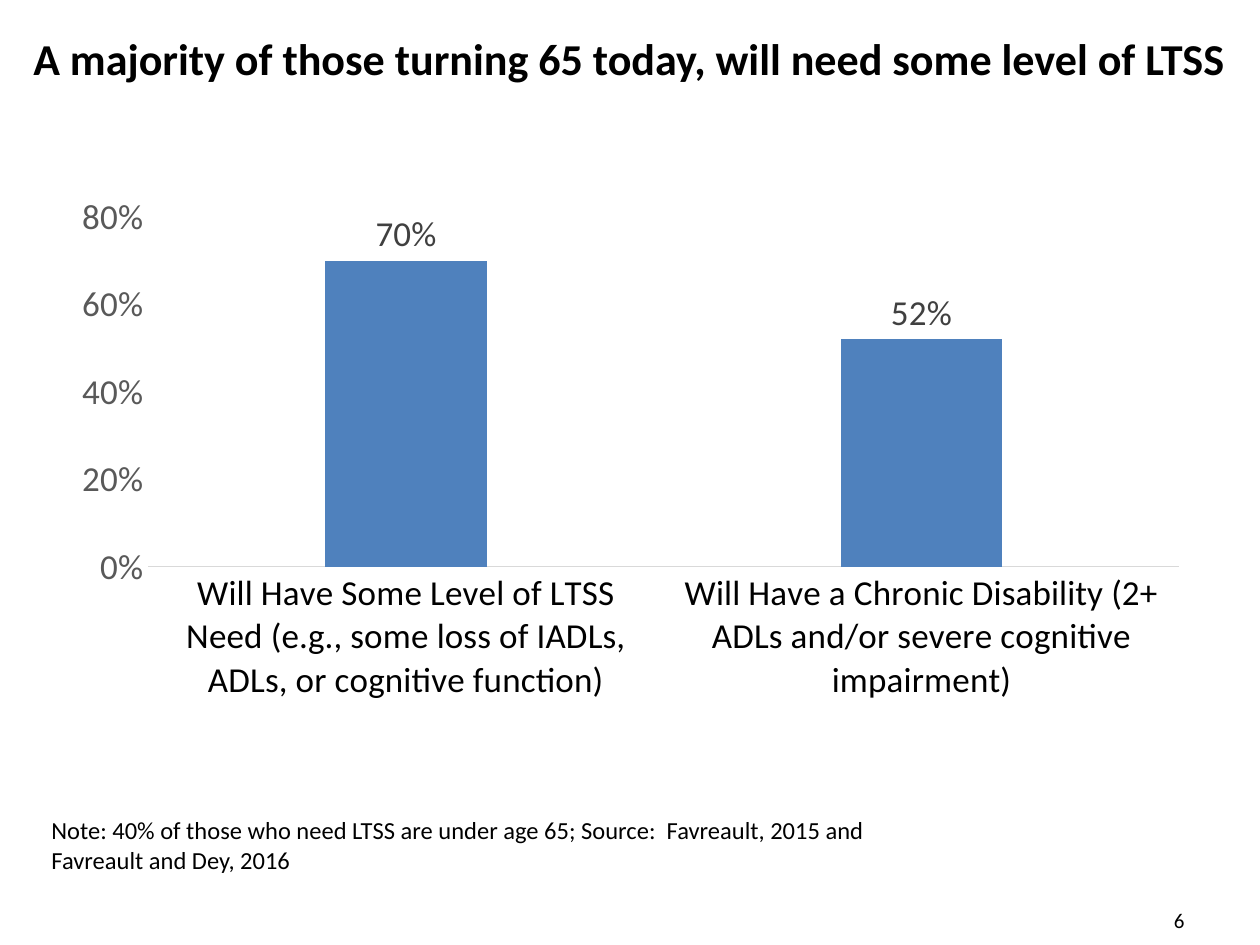
from lxml import etree
from pptx import Presentation
from pptx.chart.data import CategoryChartData
from pptx.dml.color import RGBColor
from pptx.enum.chart import XL_CHART_TYPE as ChartType, XL_LABEL_POSITION as LabelPos
from pptx.enum.chart import XL_TICK_MARK as Tick
from pptx.enum.text import MSO_ANCHOR as Anchor, PP_ALIGN as Align
from pptx.oxml import parse_xml
from pptx.oxml.ns import nsdecls, qn
from pptx.util import Inches, Pt

BLACK, GRAY, LABEL_GRAY = "000000", "595959", "404040"


def style(font, size, color=BLACK, bold=False):
    font.name, font.size, font.bold = "Calibri", Pt(size), bold
    font.color.rgb = RGBColor.from_string(color)


def write(shape, text, size, bold=False, align=Align.LEFT, anchor=Anchor.TOP, side=0.1):
    frame = shape.text_frame
    frame.word_wrap = True
    frame.vertical_anchor = anchor
    frame.margin_left = frame.margin_right = Inches(side)
    line = frame.paragraphs[0]
    line.alignment = align
    run = line.add_run()
    run.text = text
    style(run.font, size, bold=bold)


deck = Presentation()
deck.slide_width, deck.slide_height = Inches(10), Inches(7.5)
slide = deck.slides.add_slide(deck.slide_layouts[5])

headline = slide.shapes.title
headline.left, headline.top = Inches(0.16), Inches(0.12)
headline.width, headline.height = Inches(9.67), Inches(0.68)
write(headline, "A majority of those turning 65 today, will need some level of LTSS", 25.2,
      bold=True, align=Align.CENTER, anchor=Anchor.MIDDLE, side=0.05)

needs = CategoryChartData(number_format="0%")
needs.categories = [
    "Will Have Some Level of LTSS Need (e.g., some loss of IADLs, ADLs, or cognitive function)",
    "Will Have a Chronic Disability (2+ ADLs and/or severe cognitive impairment)",
]
needs.add_series("Series 1", [0.7, 0.52])
chart = slide.shapes.add_chart(ChartType.COLUMN_CLUSTERED, Inches(0.32), Inches(0.98),
                               Inches(9.33), Inches(4.92), needs).chart
chart.has_legend = chart.has_title = False
style(chart.font, 20)

outcomes = chart.category_axis
outcomes.major_tick_mark = Tick.NONE
outcomes.format.line.color.rgb = RGBColor.from_string("D9D9D9")
outcomes.format.line.width = Pt(0.75)
style(outcomes.tick_labels.font, 20)

share = chart.value_axis
share.minimum_scale, share.maximum_scale, share.major_unit = 0, 0.8, 0.2
share.has_major_gridlines = False
share.major_tick_mark = Tick.NONE
share.format.line.fill.background()
share.tick_labels.number_format = "0%"
share.tick_labels.number_format_is_linked = False
style(share.tick_labels.font, 20, GRAY)

columns = chart.plots[0]
columns.gap_width, columns.overlap = 219, -27
columns.vary_by_categories = False
bars = columns.series[0].format.fill
bars.solid()
bars.fore_color.rgb = RGBColor.from_string("4F81BD")
columns.has_data_labels = True
percents = columns.data_labels
percents.show_value = True
percents.position = LabelPos.OUTSIDE_END
percents.number_format, percents.number_format_is_linked = "0%", False
style(percents.font, 20, LABEL_GRAY)

plot_area = chart.element.find(".//" + qn("c:plotArea"))
for old in plot_area.findall(qn("c:layout")):
    plot_area.remove(old)
layout = parse_xml(f"<c:layout {nsdecls('c')}><c:manualLayout/></c:layout>")
for tag, value in [("layoutTarget", "inner"), ("xMode", "edge"), ("yMode", "edge"),
                   ("x", "0.092"), ("y", "0.151"), ("w", "0.877"), ("h", "0.564")]:
    etree.SubElement(layout[0], qn(f"c:{tag}")).set("val", value)
plot_area.insert(0, layout)

note = slide.shapes.add_textbox(Inches(0.31), Inches(6.42), Inches(6.7), Inches(0.57))
write(note, "Note: 40% of those who need LTSS are under age 65; Source:  Favreault, 2015 and "
      "Favreault and Dey, 2016", 14)

page = slide.shapes.add_textbox(Inches(7.17), Inches(7.1), Inches(2.33), Inches(0.4))
write(page, "6", 12, align=Align.RIGHT, anchor=Anchor.MIDDLE)

deck.save("out.pptx")
